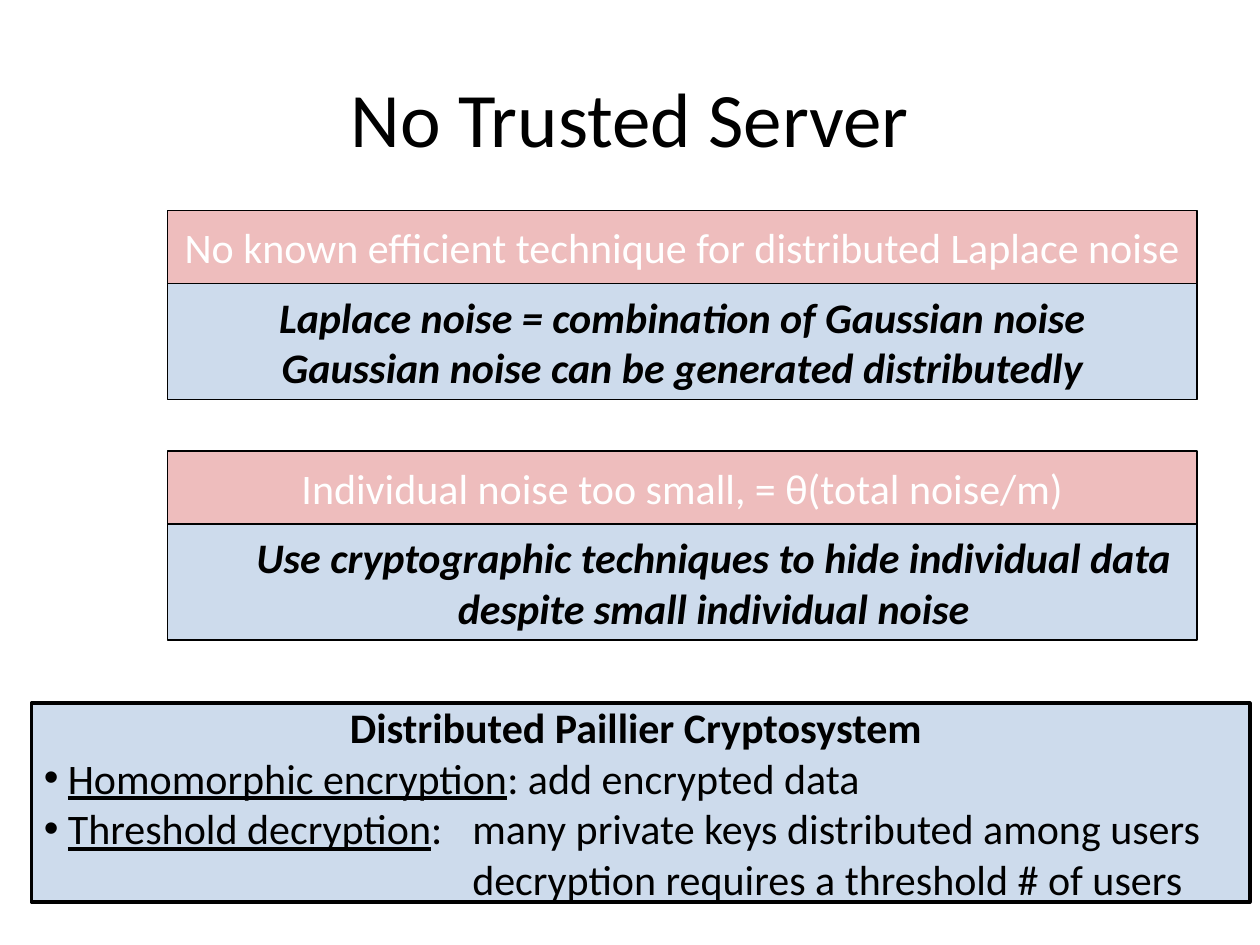
from lxml.etree import SubElement
from pptx import Presentation
from pptx.dml.color import RGBColor
from pptx.enum.shapes import MSO_SHAPE
from pptx.enum.text import MSO_ANCHOR, PP_ALIGN
from pptx.oxml.ns import qn
from pptx.util import Inches, Pt

RED = RGBColor(0xC0, 0x00, 0x00)
BLUE = RGBColor(0x4F, 0x81, 0xBD)
BLACK = RGBColor(0x00, 0x00, 0x00)
WHITE = RGBColor(0xFF, 0xFF, 0xFF)
FONT = "Calibri"
HEAD_H = 0.58
BODY_H = 0.92
HANG = 0.19
TAB = 3.4


def add_run(p, text, size=24, color=BLACK, bold=False, italic=False, underline=False):
    r = p.add_run()
    r.text = text
    f = r.font
    f.name, f.size, f.bold, f.italic, f.underline = FONT, Pt(size), bold, italic, underline
    f.color.rgb = color


def add_paragraph(tf, first=False, align=PP_ALIGN.LEFT, left=0, indent=0):
    p = tf.paragraphs[0] if first else tf.add_paragraph()
    p.alignment = align
    pPr = p._p.get_or_add_pPr()
    pPr.set("marL", str(Inches(left)))
    pPr.set("indent", str(Inches(indent)))
    return p


def add_bullet(p):
    pPr = p._p.get_or_add_pPr()
    SubElement(pPr, qn("a:buFont"), typeface="Arial")
    SubElement(pPr, qn("a:buChar"), char="•")


def add_tab(p, pos):
    tabs = SubElement(p._p.get_or_add_pPr(), qn("a:tabLst"))
    SubElement(tabs, qn("a:tab"), pos=str(Inches(pos)), algn="l")


def add_box(s, left, top, width, height, color, opacity, line=1):
    sp = s.shapes.add_shape(MSO_SHAPE.RECTANGLE, Inches(left), Inches(top),
                            Inches(width), Inches(height))
    sp.shadow.inherit = False
    sp.fill.solid()
    sp.fill.fore_color.rgb = color
    clr = sp.fill._xPr.find(qn("a:solidFill"))[0]
    SubElement(clr, qn("a:alpha"), val=str(opacity * 1000))
    sp.line.color.rgb = BLACK
    sp.line.width = Pt(line)
    tf = sp.text_frame
    tf.word_wrap = True
    tf.vertical_anchor = MSO_ANCHOR.MIDDLE
    return tf


def add_title(s, left, top, width, height, text):
    sp = s.shapes.title
    sp.left, sp.top, sp.width, sp.height = map(Inches, (left, top, width, height))
    tf = sp.text_frame
    tf.vertical_anchor = MSO_ANCHOR.MIDDLE
    add_run(add_paragraph(tf, True, PP_ALIGN.CENTER), text, 44)


def add_problem(s, left, top, width, problem, solution, indent=0):
    tf = add_box(s, left, top, width, HEAD_H, RED, 26)
    add_run(add_paragraph(tf, True, PP_ALIGN.CENTER), problem, color=WHITE)
    tf = add_box(s, left, top + HEAD_H, width, BODY_H, BLUE, 28)
    for i, text in enumerate(solution):
        p = add_paragraph(tf, i == 0, PP_ALIGN.CENTER, indent)
        add_run(p, text, bold=True, italic=True)


def add_cryptosystem(s, left, top, width, height):
    tf = add_box(s, left, top, width, height, BLUE, 28, 2)
    p = add_paragraph(tf, True, PP_ALIGN.CENTER)
    add_run(p, "Distributed Paillier Cryptosystem ", bold=True)
    for term, meaning in (("Homomorphic encryption", ": add encrypted data"),
                          ("Threshold decryption",
                           ":\tmany private keys distributed among users")):
        p = add_paragraph(tf, left=HANG, indent=-HANG)
        add_bullet(p)
        if "\t" in meaning:
            add_tab(p, TAB)
        add_run(p, term, underline=True)
        add_run(p, meaning)
    p = add_paragraph(tf, left=TAB)
    add_run(p, "decryption requires a threshold # of users")


def main():
    prs = Presentation()
    prs.slide_width, prs.slide_height = Inches(10), Inches(7.5)
    s = prs.slides.add_slide(prs.slide_layouts[5])
    add_title(s, 0.5, 0.3, 9, 1.25, "No Trusted Server")
    add_problem(s, 1.33, 1.67, 8.17,
                "No known efficient technique for distributed Laplace noise",
                ["Laplace noise = combination of Gaussian noise",
                 "Gaussian noise can be generated distributedly"])
    add_problem(s, 1.33, 3.58, 8.17,
                "Individual noise too small, = θ(total noise/m)",
                ["Use cryptographic techniques to hide individual data "
                 "despite small individual noise"], 0.5)
    add_cryptosystem(s, 0.25, 5.58, 9.67, 1.58)
    prs.save("out.pptx")


if __name__ == "__main__":
    main()
